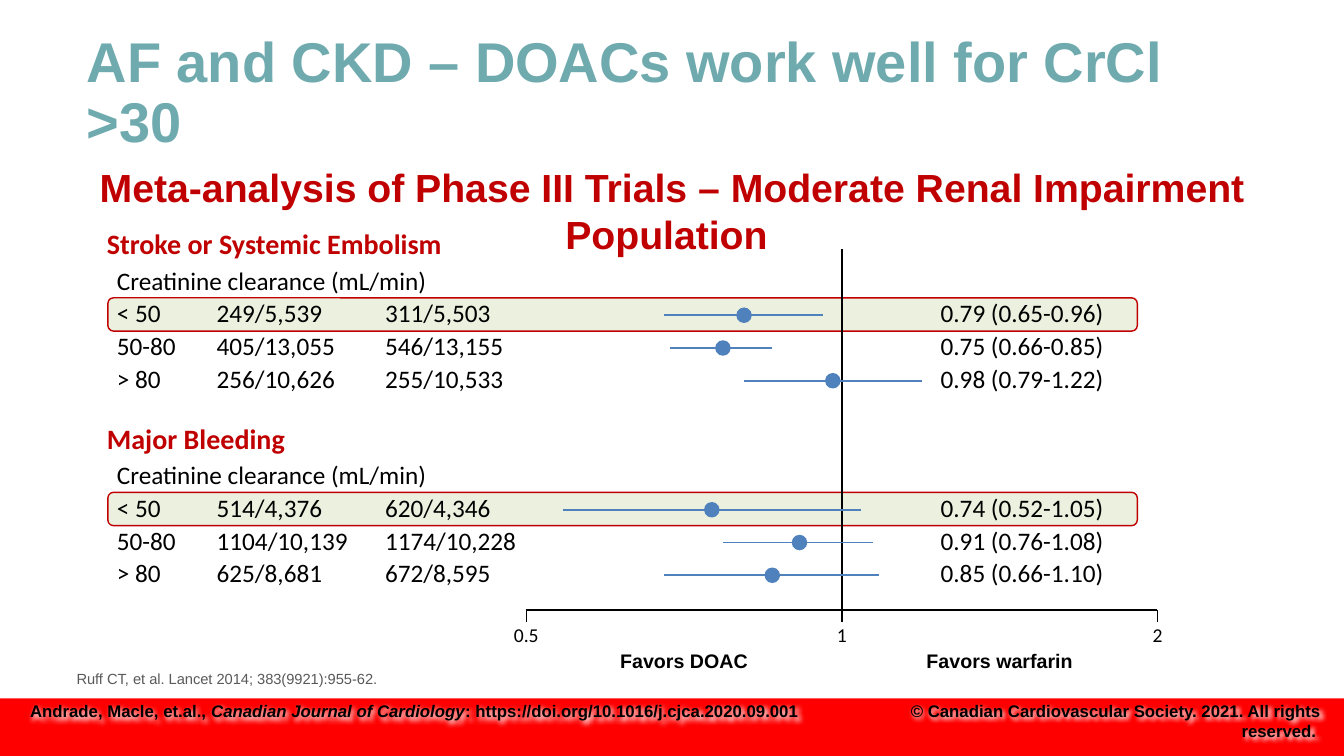
from lxml import etree
from pptx import Presentation
from pptx.dml.color import RGBColor
from pptx.enum.shapes import MSO_CONNECTOR, MSO_SHAPE
from pptx.enum.text import MSO_ANCHOR, MSO_AUTO_SIZE, PP_ALIGN
from pptx.oxml.ns import qn
from pptx.util import Inches, Pt

BLACK = RGBColor(0x00, 0x00, 0x00)
GRAY = RGBColor(0x59, 0x59, 0x59)
TEAL = RGBColor(0x6F, 0xAA, 0xAF)
CRIMSON = RGBColor(0xC0, 0x00, 0x00)
RED = RGBColor(0xFF, 0x00, 0x00)
PALE_GREEN = RGBColor(0xEB, 0xF1, 0xDE)
BLUE = RGBColor(0x4F, 0x81, 0xBD)

NO_GRID_STYLE = "{2D5ABB26-0587-4C30-8999-92F81FD0307C}"
COLUMN_WIDTHS = [0.99, 1.67, 1.55, 3.96, 2.53]
ROW_HEIGHT = 0.325
TABLE_LEFT = 1.16
AXIS_TOP = 6.05
AXIS_LEFT, AXIS_CENTER, AXIS_RIGHT = 5.22, 8.35, 11.48
DOT_SIZE = 0.14

# Each row: clearance, DOAC events, warfarin events, ratio, (low, estimate, high) in inches
OUTCOMES = [
    ("Stroke or Systemic Embolism", 2.64, [
        ("< 50", "249/5,539", "311/5,503", "0.79 (0.65-0.96)", (6.59, 7.38, 8.16)),
        ("50-80", "405/13,055", "546/13,155", "0.75 (0.66-0.85)", (6.65, 7.17, 7.66)),
        ("> 80", "256/10,626", "255/10,533", "0.98 (0.79-1.22)", (7.38, 8.26, 9.14)),
    ]),
    ("Major Bleeding", 4.57, [
        ("< 50", "514/4,376", "620/4,346", "0.74 (0.52-1.05)", (5.58, 7.06, 8.54)),
        ("50-80", "1104/10,139", "1174/10,228", "0.91 (0.76-1.08)", (7.17, 7.93, 8.66)),
        ("> 80", "625/8,681", "672/8,595", "0.85 (0.66-1.10)", (6.59, 7.66, 8.72)),
    ]),
]


def style(paragraph, size, color, name="Arial", bold=False, align=PP_ALIGN.LEFT):
    paragraph.alignment = align
    font = paragraph.font
    font.size, font.name, font.bold = Pt(size), name, bold
    font.color.rgb = color


def add_text(slide, box, text, size, color, inset=0, anchor=MSO_ANCHOR.TOP, **options):
    shape = slide.shapes.add_textbox(*map(Inches, box))
    frame = shape.text_frame
    frame.word_wrap = True
    frame.vertical_anchor = anchor
    if inset == 0:
        frame.margin_left = frame.margin_right = frame.margin_top = frame.margin_bottom = 0
    paragraph = frame.paragraphs[0]
    for part, italic in [(text, None)] if isinstance(text, str) else text:
        run = paragraph.add_run()
        run.text = part
        run.font.italic = italic
    style(paragraph, size, color, **options)
    return shape


def add_block(slide, kind, box, fill, line=None):
    shape = slide.shapes.add_shape(kind, *map(Inches, box))
    shape.shadow.inherit = False
    shape.fill.solid()
    shape.fill.fore_color.rgb = fill
    if line is None:
        shape.line.fill.background()
    else:
        shape.line.color.rgb = line
        shape.line.width = Pt(1)


def add_line(slide, start, end, color, width):
    line = slide.shapes.add_connector(MSO_CONNECTOR.STRAIGHT, *map(Inches, start + end))
    line.line.color.rgb = color
    line.line.width = Pt(width)
    etree.SubElement(line._element.spPr, qn("a:effectLst"))


def add_halo(shape):
    effects = etree.SubElement(shape._element.spPr, qn("a:effectLst"))
    shadow = etree.SubElement(effects, qn("a:outerShdw"), blurRad="38100", dist="25400", dir="2700000")
    etree.SubElement(shadow, qn("a:srgbClr"), val="FFFFFF")


def add_title(slide, text):
    title = slide.shapes.title
    title.left, title.top, title.width, title.height = map(Inches, (0.76, 0.4, 11.81, 1.07))
    frame = title.text_frame
    frame.text = text
    frame.word_wrap = True
    frame.auto_size = MSO_AUTO_SIZE.NONE
    frame.vertical_anchor = MSO_ANCHOR.MIDDLE
    frame.paragraphs[0].line_spacing = 0.9
    style(frame.paragraphs[0], 40, TEAL, bold=True)


def add_outcome_table(slide, top, rows):
    frame = slide.shapes.add_table(len(rows) + 1, len(COLUMN_WIDTHS), Inches(TABLE_LEFT), Inches(top),
                                   Inches(sum(COLUMN_WIDTHS)), Inches(ROW_HEIGHT * (len(rows) + 1)))
    table = frame.table
    table.first_row = table.horz_banding = False
    table._tbl.tblPr.find(qn("a:tableStyleId")).text = NO_GRID_STYLE
    for column, width in zip(table.columns, COLUMN_WIDTHS):
        column.width = Inches(width)
    lines = [["Creatinine clearance (mL/min)", "", "", "", ""]]
    lines += [[clearance, doac, warfarin, "", ratio] for clearance, doac, warfarin, ratio, _ in rows]
    for row, texts in zip(table.rows, lines):
        for cell, text in zip(row.cells, texts):
            cell.text = text
            cell.fill.background()
            cell.margin_left = cell.margin_right = cell.margin_top = cell.margin_bottom = 0
            style(cell.text_frame.paragraphs[0], 18, BLACK, "Calibri")
    table.cell(0, 0).merge(table.cell(0, len(COLUMN_WIDTHS) - 1))


def add_outcome(slide, heading, top, rows):
    add_block(slide, MSO_SHAPE.ROUNDED_RECTANGLE, (1.07, top + 0.315, 10.21, 0.33), PALE_GREEN, CRIMSON)
    add_text(slide, (1.06, top - 0.39, 4.32, 0.44), heading, 20, CRIMSON, name="Calibri", bold=True)
    add_outcome_table(slide, top, rows)


def add_intervals(slide, top, rows):
    for index, (*_, (low, estimate, high)) in enumerate(rows, 1):
        middle = top + ROW_HEIGHT * (index + 0.5)
        add_line(slide, (low, middle), (high, middle), BLUE, 1.25)
        dot = (estimate - DOT_SIZE / 2, middle - DOT_SIZE / 2, DOT_SIZE, DOT_SIZE)
        add_block(slide, MSO_SHAPE.OVAL, dot, BLUE, BLUE)


def add_axis(slide):
    add_line(slide, (AXIS_LEFT, AXIS_TOP), (AXIS_RIGHT, AXIS_TOP), BLACK, 1.5)
    add_line(slide, (AXIS_CENTER, 2.47), (AXIS_CENTER, AXIS_TOP), BLACK, 1.5)
    for label, x in (("0.5", AXIS_LEFT), ("1", AXIS_CENTER), ("2", AXIS_RIGHT)):
        add_line(slide, (x, AXIS_TOP), (x, AXIS_TOP + 0.12), BLACK, 1)
        add_text(slide, (x - 0.36, 6.18, 0.72, 0.27), label, 14, BLACK, name="Calibri", align=PP_ALIGN.CENTER)
    for label, x in (("Favors DOAC", AXIS_LEFT), ("Favors warfarin", AXIS_CENTER)):
        add_text(slide, (x, 6.44, AXIS_CENTER - AXIS_LEFT, 0.51), label, 14, BLACK,
                 bold=True, align=PP_ALIGN.CENTER)


def add_footer(slide):
    add_block(slide, MSO_SHAPE.RECTANGLE, (0, 6.93, 13.33, 0.57), RED)
    citation = [("Andrade, Macle, et.al., ", None), ("Canadian Journal of Cardiology", True),
                (": https://doi.org/10.1016/j.cjca.2020.09.001", None)]
    add_halo(add_text(slide, (0.2, 6.9, 8, 0.3), citation, 12, BLACK, inset=None, bold=True))
    add_halo(add_text(slide, (8.7, 6.9, 4.5, 0.3), "© Canadian Cardiovascular Society. 2021. All rights reserved. ",
                      12, BLACK, inset=None, bold=True, align=PP_ALIGN.RIGHT))


def main():
    presentation = Presentation()
    presentation.slide_width, presentation.slide_height = Inches(13.33), Inches(7.5)
    slide = presentation.slides.add_slide(presentation.slide_layouts[5])
    add_footer(slide)
    add_title(slide, "AF and CKD – DOACs work well for CrCl >30")
    for outcome in OUTCOMES:
        add_outcome(slide, *outcome)
    add_text(slide, (0.76, 6.49, 4.04, 0.33), "Ruff CT, et al. Lancet 2014; 383(9921):955-62.",
             10.5, GRAY, anchor=MSO_ANCHOR.BOTTOM)
    add_axis(slide)
    for _, top, rows in OUTCOMES:
        add_intervals(slide, top, rows)
    add_text(slide, (0, 1.62, 13.33, 0.57),
             "Meta-analysis of Phase III Trials – Moderate Renal Impairment Population ",
             28, CRIMSON, bold=True, align=PP_ALIGN.CENTER)
    presentation.save("out.pptx")


if __name__ == "__main__":
    main()
